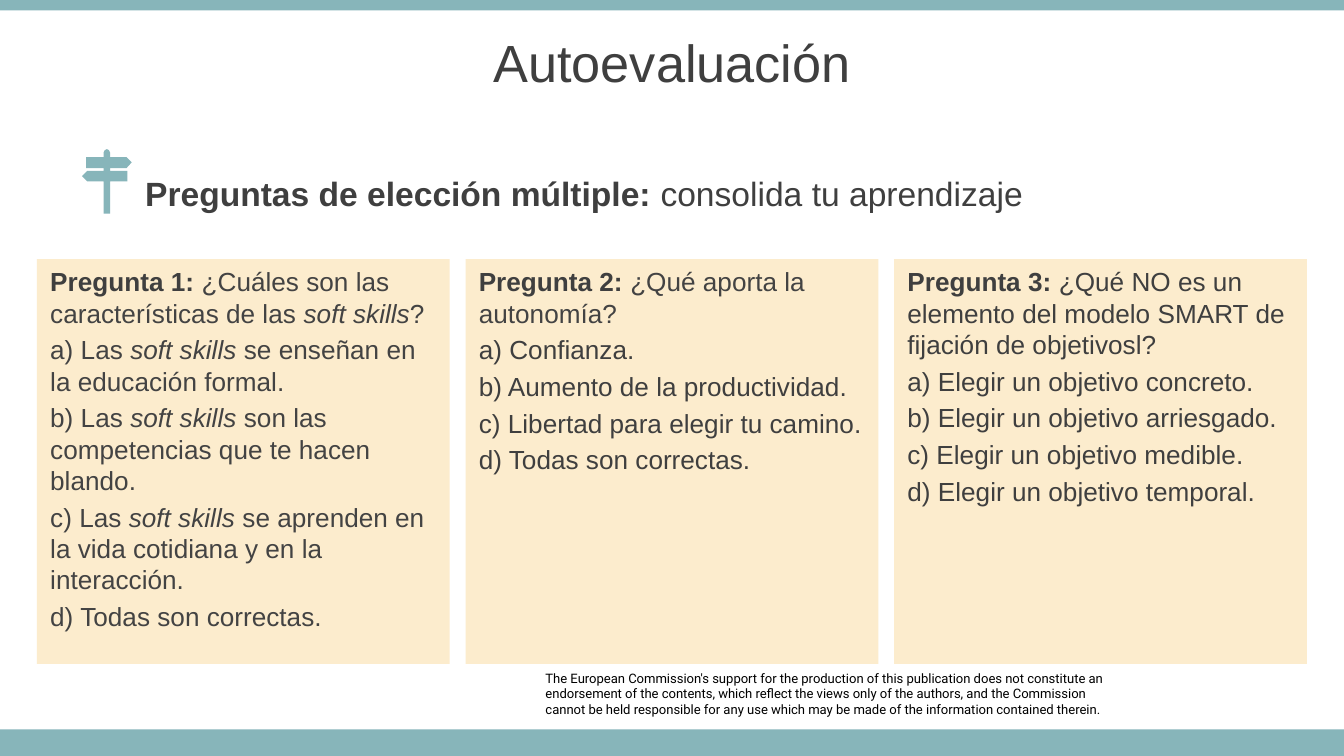
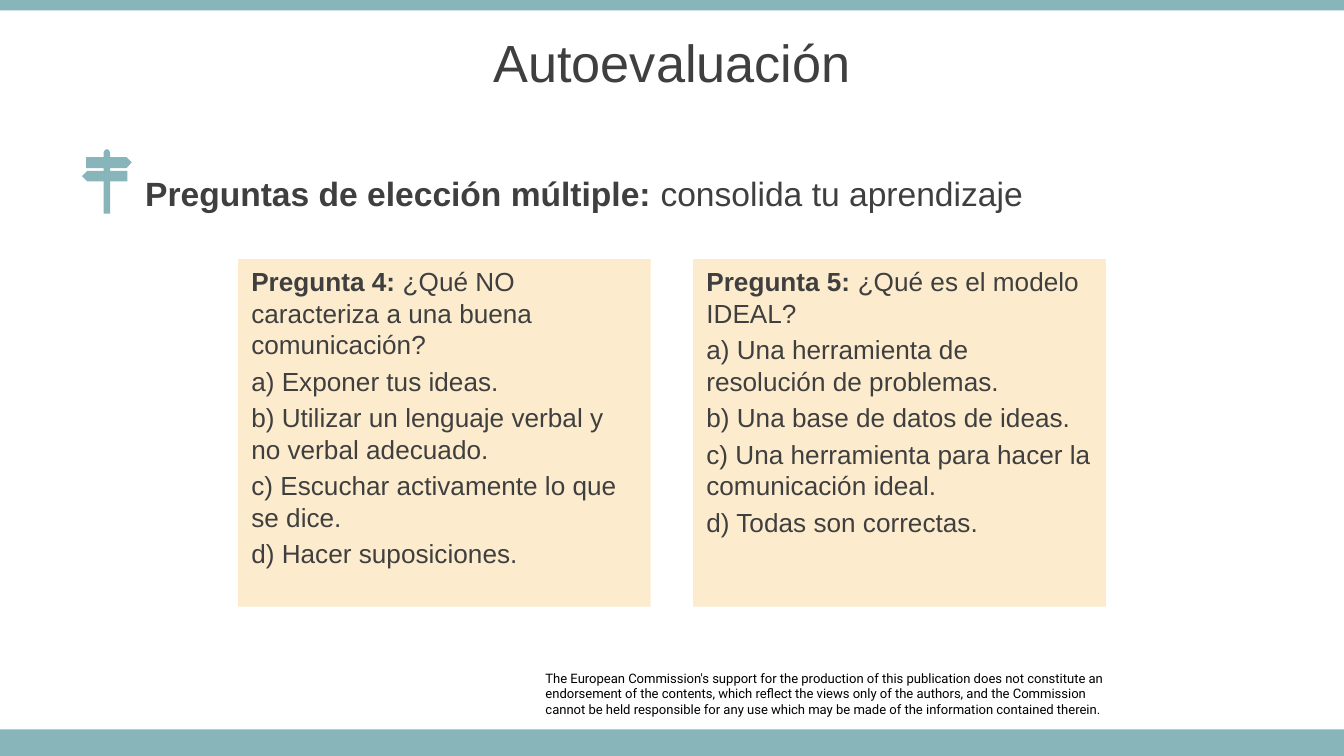
from dataclasses import dataclass

from lxml.etree import SubElement
from pptx import Presentation
from pptx.dml.color import RGBColor
from pptx.enum.shapes import MSO_SHAPE as Preset
from pptx.enum.text import MSO_ANCHOR as Anchor, MSO_AUTO_SIZE as AutoSize, PP_ALIGN as Align
from pptx.oxml.ns import qn
from pptx.util import Cm, Pt

TEAL = RGBColor(0x87, 0xB5, 0xBA)
CREAM = RGBColor(0xFC, 0xEC, 0xCD)
INK = RGBColor(0x3F, 0x3F, 0x3F)
SOFT_INK = RGBColor(0x43, 0x43, 0x43)
BLACK = RGBColor(0, 0, 0)

SLIDE_WIDTH, SLIDE_HEIGHT = 25.4, 14.29
CARD_TOP, CARD_WIDTH = 4.9, 7.8

DISCLAIMER = (
    "The European Commission's support for the production of this publication does not "
    "constitute an endorsement of the contents, which reflect the views only of the "
    "authors, and the Commission\n"
    "cannot be held responsible for any use which may be made of the information "
    "contained therein."
)
SIGNPOST_OUTLINE = [
    (2.06, 2.84), (2.08, 2.88), (2.08, 2.97), (2.39, 2.97), (2.49, 3.07), (2.39, 3.18),
    (2.08, 3.18), (2.08, 3.23), (2.41, 3.23), (2.41, 3.43), (2.08, 3.43), (2.08, 4.04),
    (1.96, 4.04), (1.96, 3.43), (1.65, 3.43), (1.55, 3.33), (1.65, 3.23), (1.96, 3.23),
    (1.96, 3.18), (1.63, 3.18), (1.63, 2.97), (1.96, 2.97), (1.96, 2.88), (1.98, 2.84),
]


@dataclass
class Question:
    label: str
    prompt: str
    answers: list
    prompt_ink: RGBColor = INK
    answer_ink: RGBColor = INK


FIRST_QUESTIONS = [
    Question("Pregunta 1: ", "¿Cuáles son las características de las _soft skills_?", [
        "a) Las _soft skills _se enseñan en la educación formal.",
        "b) Las _soft skills _son las competencias que te hacen blando.",
        "c) Las _soft skills _se aprenden en la vida cotidiana y en la interacción.",
        "d) Todas son correctas.",
    ], SOFT_INK, SOFT_INK),
    Question("Pregunta 2: ", "¿Qué aporta la autonomía?", [
        "a) Confianza.",
        "b) Aumento de la productividad.",
        "c) Libertad para elegir tu camino.",
        "d) Todas son correctas.",
    ], SOFT_INK),
    Question("Pregunta 3: ", "¿Qué NO es un elemento del modelo SMART de fijación de objetivosl?", [
        "a) Elegir un objetivo concreto.",
        "b) Elegir un objetivo arriesgado.",
        "c) Elegir un objetivo medible.",
        "d) Elegir un objetivo temporal.",
    ]),
]
LAST_QUESTIONS = [
    Question("Pregunta 4: ", "¿Qué NO caracteriza a una buena comunicación?", [
        "a) Exponer tus ideas.",
        "b) Utilizar un lenguaje verbal y no verbal adecuado.",
        "c) Escuchar activamente lo que se dice.",
        "d) Hacer suposiciones.",
    ]),
    Question("Pregunta 5: ", "¿Qué es el modelo IDEAL?", [
        "a) Una herramienta de resolución de problemas.",
        "b) Una base de datos de ideas.",
        "c) Una herramienta para hacer la comunicación ideal.",
        "d) Todas son correctas.",
    ]),
]


def style_run(run, size, color=INK, bold=False, italic=False, face="Arial"):
    font = run.font
    font.name, font.size = face, Pt(size)
    font.bold, font.italic = bold, italic
    font.color.rgb = color


def add_text(paragraph, text, size, color=INK, bold=False):
    for index, part in enumerate(text.split("_")):
        if part:
            run = paragraph.add_run()
            run.text = part
            style_run(run, size, color, bold, italic=index % 2 == 1)


def paint(shape, color):
    shape.shadow.inherit = False
    shape.fill.solid()
    shape.fill.fore_color.rgb = color
    shape.line.fill.background()


def add_block(slide, left, top, width, height, color):
    block = slide.shapes.add_shape(Preset.RECTANGLE, Cm(left), Cm(top), Cm(width), Cm(height))
    paint(block, color)
    return block


def place_placeholder(holder, left, top, width, height):
    holder.left, holder.top = Cm(left), Cm(top)
    holder.width, holder.height = Cm(width), Cm(height)
    frame = holder.text_frame
    frame.word_wrap = True
    frame.auto_size = AutoSize.NONE
    frame.vertical_anchor = Anchor.MIDDLE
    return frame.paragraphs[0]


def add_headings(slide):
    title = place_placeholder(slide.shapes.title, 0, 0.36, SLIDE_WIDTH, 1.6)
    title.alignment = Align.CENTER
    add_text(title, "Autoevaluación", 28)

    subtitle = place_placeholder(slide.placeholders[1], 2.49, 3.25, 19.7, 0.79)
    properties = subtitle._p.get_or_add_pPr()
    properties.set("marL", "0")
    properties.set("indent", "0")
    SubElement(properties, qn("a:buNone"))
    subtitle.space_before = Pt(0)
    add_text(subtitle, "Preguntas de elección múltiple: ", 18, bold=True)
    add_text(subtitle, "consolida tu aprendizaje", 18)


def add_disclaimer(slide):
    box = slide.shapes.add_textbox(Cm(10.31), Cm(12.67), Cm(10.59), Cm(0.89))
    frame = box.text_frame
    frame.word_wrap = True
    frame.margin_left = frame.margin_right = frame.margin_top = frame.margin_bottom = 0
    frame.text = DISCLAIMER
    for paragraph in frame.paragraphs:
        style_run(paragraph.runs[0], 7, BLACK, face="Roboto")


def add_signpost(slide):
    builder = slide.shapes.build_freeform(Cm(2.02), Cm(2.82))
    builder.add_line_segments([(Cm(x), Cm(y)) for x, y in SIGNPOST_OUTLINE])
    paint(builder.convert_to_shape(), TEAL)


def add_question_card(slide, question, left, height):
    card = add_block(slide, left, CARD_TOP, CARD_WIDTH, height, CREAM)
    frame = card.text_frame
    frame.word_wrap = True
    frame.vertical_anchor = Anchor.TOP
    prompt = frame.paragraphs[0]
    prompt.alignment = Align.LEFT
    add_text(prompt, question.label, 14, bold=True)
    add_text(prompt, question.prompt, 14, question.prompt_ink)
    for answer in question.answers:
        line = frame.add_paragraph()
        line.alignment = Align.LEFT
        line.space_before = Pt(2.8)
        add_text(line, answer, 14, question.answer_ink)


def add_quiz_slide(deck, questions, first_left, gap, card_height):
    slide = deck.slides.add_slide(deck.slide_layouts[1])
    add_disclaimer(slide)
    add_block(slide, 0, 13.79, SLIDE_WIDTH, 0.5, TEAL)
    add_block(slide, 0, 0, SLIDE_WIDTH, 0.2, TEAL)
    add_headings(slide)
    add_signpost(slide)
    for column, question in enumerate(questions):
        left = first_left + column * (CARD_WIDTH + gap)
        add_question_card(slide, question, left, card_height)


def main():
    deck = Presentation()
    deck.slide_width, deck.slide_height = Cm(SLIDE_WIDTH), Cm(SLIDE_HEIGHT)
    add_quiz_slide(deck, FIRST_QUESTIONS, 0.7, 0.3, 7.65)
    add_quiz_slide(deck, LAST_QUESTIONS, 4.5, 0.8, 6.57)
    deck.save("out.pptx")


if __name__ == "__main__":
    main()
